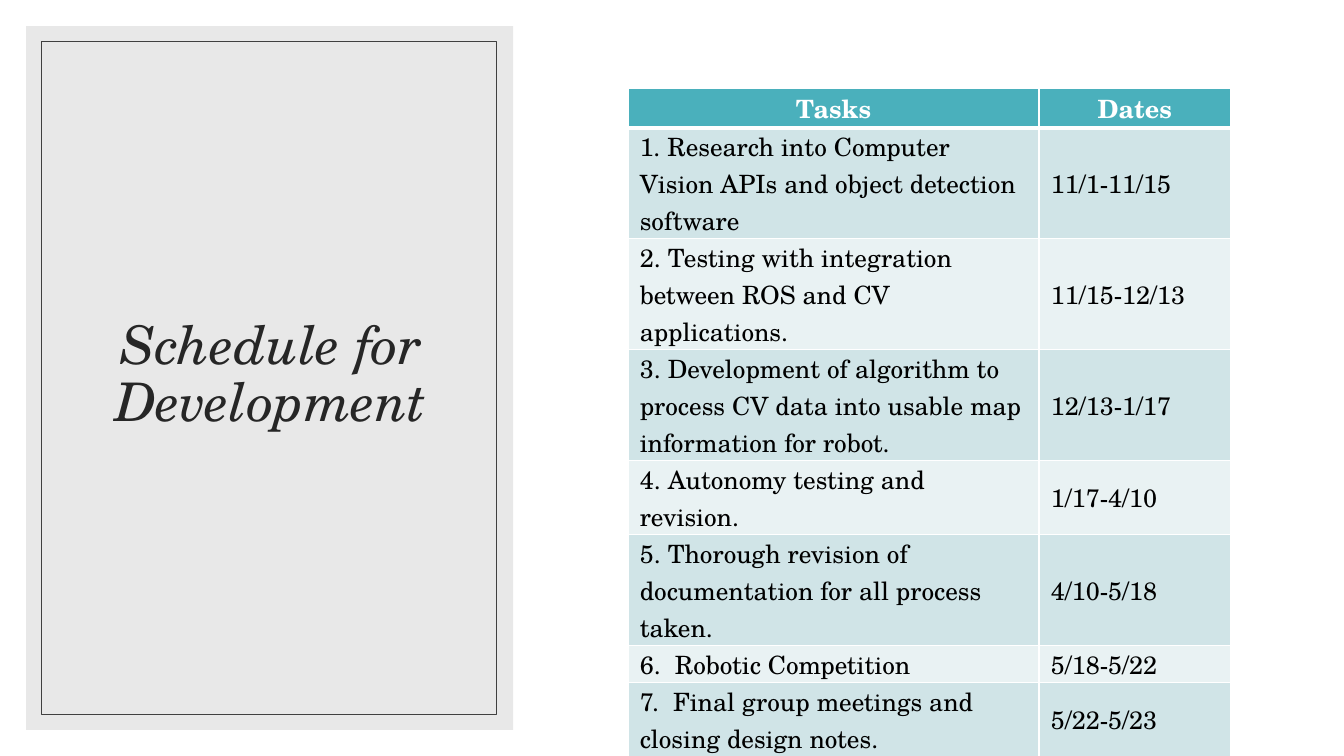
from lxml.etree import SubElement
from pptx import Presentation
from pptx.dml.color import RGBColor
from pptx.enum.shapes import MSO_SHAPE
from pptx.enum.text import MSO_ANCHOR, MSO_AUTO_SIZE, PP_ALIGN
from pptx.oxml.ns import qn
from pptx.util import Pt

FONT = "TeX Gyre Schola"


def color(hex_code):
    return RGBColor.from_string(hex_code)


def add_span(para, text, size, hex_code, bold=False, italic=False):
    span = para.add_run()
    span.text = text
    span.font.name = FONT
    span.font.size = Pt(size)
    span.font.bold = bold
    span.font.italic = italic
    span.font.color.rgb = color(hex_code)


deck = Presentation()
deck.slide_width, deck.slide_height = Pt(960), Pt(540)
page = deck.slides.add_slide(deck.slide_layouts[5])
title = page.shapes.title

# Backdrop, grey panel and thin frame
panels = [
    ((0, 0, 960, 540), "FFFFFF", None),
    ((18.7, 18.7, 347.8, 502.6), "D9D9D9", None),
    ((29.5, 29.5, 324.7, 481), None, "404040"),
]
for place, fill_color, line_color in panels:
    panel = page.shapes.add_shape(MSO_SHAPE.RECTANGLE, *map(Pt, place))
    panel.shadow.inherit = False
    if fill_color:
        panel.fill.solid()
        panel.fill.fore_color.rgb = color(fill_color)
        title.element.addprevious(panel.element)
    else:
        panel.fill.background()
    if line_color:
        panel.line.color.rgb = color(line_color)
        panel.line.width = Pt(0.5)
    else:
        panel.line.fill.background()
    if fill_color == "D9D9D9":
        shade = panel.element.spPr.find(qn("a:solidFill"))[0]
        SubElement(shade, qn("a:alpha"), val="60000")

# Title
title.left, title.top, title.width, title.height = map(Pt, (45.4, 43.9, 296.6, 449.3))
box = title.text_frame
box.word_wrap = True
box.auto_size = MSO_AUTO_SIZE.NONE
box.vertical_anchor = MSO_ANCHOR.MIDDLE
para = box.paragraphs[0]
para.alignment = PP_ALIGN.CENTER
para.line_spacing = 0.9
add_span(para, "Schedule for Development", 38, "262626", italic=True)

# Schedule table: text and row height
schedule = [
    ("Tasks", "Dates", 26.4),
    ("1. Research into Computer Vision APIs and object detection software", "11/1-11/15", 70.6),
    ("2. Testing with integration between ROS and CV applications.", "11/15-12/13", 70.6),
    ("3. Development of algorithm to process CV data into usable map information for robot.",
     "12/13-1/17", 70.6),
    ("4. Autonomy testing and revision.", "1/17-4/10", 26.4),
    ("5. Thorough revision of documentation for all process taken.", "4/10-5/18", 70.6),
    ("6.  Robotic Competition", "5/18-5/22", 26.4),
    ("7.  Final group meetings and closing design notes.", "5/22-5/23", 49),
]
frame = page.shapes.add_table(len(schedule), 2, Pt(448.6), Pt(63.4), Pt(430.4), Pt(410.6))
table = frame.table
table.columns[0].width, table.columns[1].width = Pt(293.6), Pt(136.8)

for row, (task, dates, height) in enumerate(schedule):
    table.rows[row].height = Pt(height)
    header = row == 0
    band = "4AB0BC" if header else ("E9F2F3", "D0E4E7")[row % 2]
    for column, text in enumerate((task, dates)):
        cell = table.cell(row, column)
        cell.margin_left = cell.margin_right = Pt(8.4)
        cell.margin_top = cell.margin_bottom = 0
        cell.vertical_anchor = MSO_ANCHOR.MIDDLE
        para = cell.text_frame.paragraphs[0]
        para.alignment = PP_ALIGN.CENTER if header else PP_ALIGN.LEFT
        para.space_after = Pt(6)
        add_span(para, text, 18, "FFFFFF" if header else "000000", bold=header)

        # White borders, thicker where the header meets the first task
        properties = cell._tc.get_or_add_tcPr()
        for side in ("L", "R", "T", "B"):
            thick = (row, side) in ((0, "B"), (1, "T"))
            border = SubElement(properties, qn(f"a:ln{side}"), w=str(Pt(3 if thick else 1)))
            SubElement(SubElement(border, qn("a:solidFill")), qn("a:srgbClr"), val="FFFFFF")
        cell.fill.solid()
        cell.fill.fore_color.rgb = color(band)

deck.save("out.pptx")
